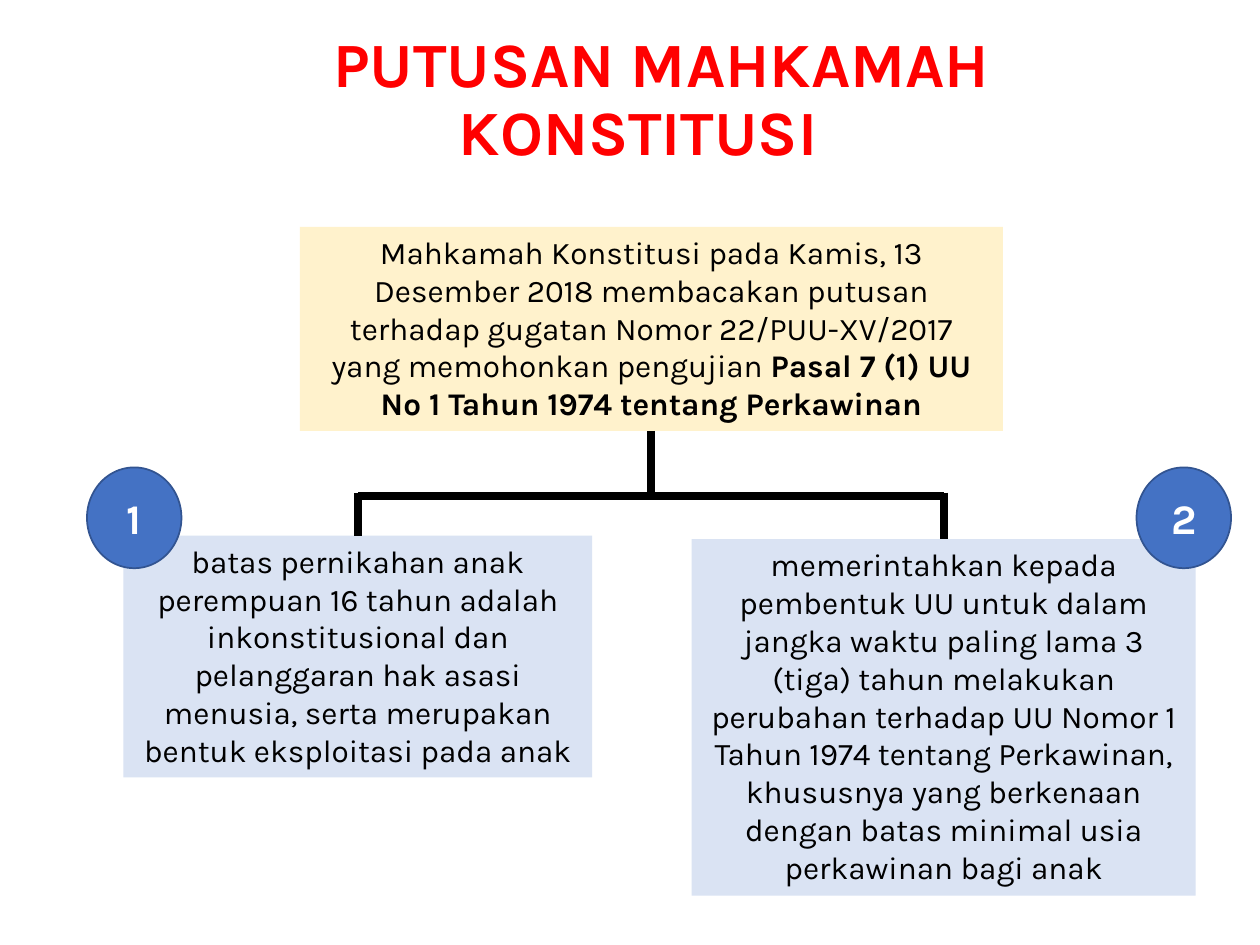
from lxml import etree
from pptx import Presentation
from pptx import util as u
from pptx.dml.color import RGBColor
from pptx.enum import shapes, text
from pptx.oxml.ns import qn

COLORS = {
    "title": "FF0000",
    "ink": "000000",
    "ruling": "FFF2CC",
    "outcome": "DAE3F3",
    "badge": "4472C4",
    "badge_line": "325491",
    "badge_text": "FFFFFF",
}
FONT = "Karla"
COLS, ROWS = 10, 7.5
WIDTH, HEIGHT = u.Inches(10), u.Inches(7.5)

RULING = [
    ("Mahkamah Konstitusi pada Kamis, 13 Desember 2018 membacakan putusan terhadap "
     "gugatan Nomor 22/PUU-XV/2017 yang memohonkan pengujian ", False),
    ("Pasal 7 (1) UU No 1 Tahun 1974 tentang Perkawinan", True),
]
OUTCOMES = [
    ("1", (0.98, 4.25, 3.72, 1.92), 0.69,
     "batas pernikahan anak perempuan 16 tahun adalah inkonstitusional dan "
     "pelanggaran hak asasi menusia, serta merupakan bentuk eksploitasi pada anak"),
    ("2", (5.49, 4.28, 4, 2.83), 9.02,
     "memerintahkan kepada pembentuk UU untuk dalam jangka waktu paling lama 3 (tiga) "
     "tahun melakukan perubahan terhadap UU Nomor 1 Tahun 1974 tentang Perkawinan, "
     "khususnya yang berkenaan dengan batas minimal usia perkawinan bagi anak"),
]
BADGE_TOP, BADGE_SIZE = 3.71, (0.75, 0.8)
BAR_ROW, LINE_PT = 3.94, 4.5
OVERLAP = 0.03


def col(n):
    return round(WIDTH * n / COLS)


def row(n):
    return round(HEIGHT * n / ROWS)


def rgb(name):
    return RGBColor.from_string(COLORS[name])


def add_run(p, words, size, color, bold=False):
    r = p.add_run()
    r.text = words
    r.font.name = FONT
    r.font.size = u.Pt(size)
    r.font.bold = bold
    r.font.color.rgb = rgb(color)


def set_title(s):
    sp = s.shapes.title
    sp.left, sp.top, sp.width, sp.height = 0, 0, col(10), row(1.6)
    tf = sp.text_frame
    tf.word_wrap = True
    tf.auto_size = text.MSO_AUTO_SIZE.NONE
    tf.vertical_anchor = text.MSO_ANCHOR.MIDDLE
    p = tf.paragraphs[0]
    p.alignment = text.PP_ALIGN.CENTER
    p.line_spacing = 0.9
    pPr = p._p.get_or_add_pPr()
    pPr.set("marL", str(col(0.13)))
    pPr.set("indent", str(col(0.37)))
    add_run(p, "PUTUSAN MAHKAMAH", 36, "title", True)
    p.add_line_break()
    add_run(p, "KONSTITUSI", 36, "title", True)


def add_panel(s, kind, at, fill, runs, size, color, anchor, line=None):
    x, y, w, h = at
    sp = s.shapes.add_shape(kind, col(x), row(y), col(w), row(h))
    sp.shadow.inherit = False
    sp.fill.solid()
    sp.fill.fore_color.rgb = rgb(fill)
    if line:
        sp.line.color.rgb = rgb(line)
        sp.line.width = u.Pt(1)
    else:
        sp.line.fill.background()
    tf = sp.text_frame
    tf.word_wrap = True
    tf.vertical_anchor = anchor
    p = tf.paragraphs[0]
    p.alignment = text.PP_ALIGN.CENTER
    for words, bold in runs:
        add_run(p, words, size, color, bold)
    return sp


def add_box(s, at, fill, runs):
    return add_panel(s, shapes.MSO_SHAPE.RECTANGLE, at, fill, runs, 18, "ink",
                     text.MSO_ANCHOR.TOP)


def add_badge(s, x, number):
    add_panel(s, shapes.MSO_SHAPE.OVAL, (x, BADGE_TOP, *BADGE_SIZE), "badge",
              [(number, True)], 24, "badge_text", text.MSO_ANCHOR.MIDDLE, "badge_line")


def add_line(s, x1, y1, x2, y2):
    line = s.shapes.add_connector(shapes.MSO_CONNECTOR.STRAIGHT, x1, y1, x2, y2)
    line.line.color.rgb = rgb("ink")
    line.line.width = u.Pt(LINE_PT)
    etree.SubElement(line._element.spPr, qn("a:effectLst"))
    return line


def middle(sp):
    return sp.left + sp.width // 2


def add_branches(s, ruling, boxes):
    x, bar = middle(ruling), row(BAR_ROW)
    stem = add_line(s, x, ruling.top + ruling.height, x, bar + row(OVERLAP))
    stem.begin_connect(ruling, 2)
    for box in boxes:
        end = middle(box)
        add_line(s, x, bar, end, bar)
        drop = add_line(s, end, bar - row(OVERLAP), end, box.top)
        drop.end_connect(box, 0)


def main():
    prs = Presentation()
    prs.slide_width, prs.slide_height = WIDTH, HEIGHT
    s = prs.slides.add_slide(prs.slide_layouts[5])
    set_title(s)
    ruling = add_box(s, (2.38, 1.8, 5.58, 1.62), "ruling", RULING)
    boxes = [add_box(s, at, "outcome", [(words, False)]) for _, at, _, words in OUTCOMES]
    add_branches(s, ruling, boxes)
    for number, _, x, _ in OUTCOMES:
        add_badge(s, x, number)
    prs.save("out.pptx")


if __name__ == "__main__":
    main()
